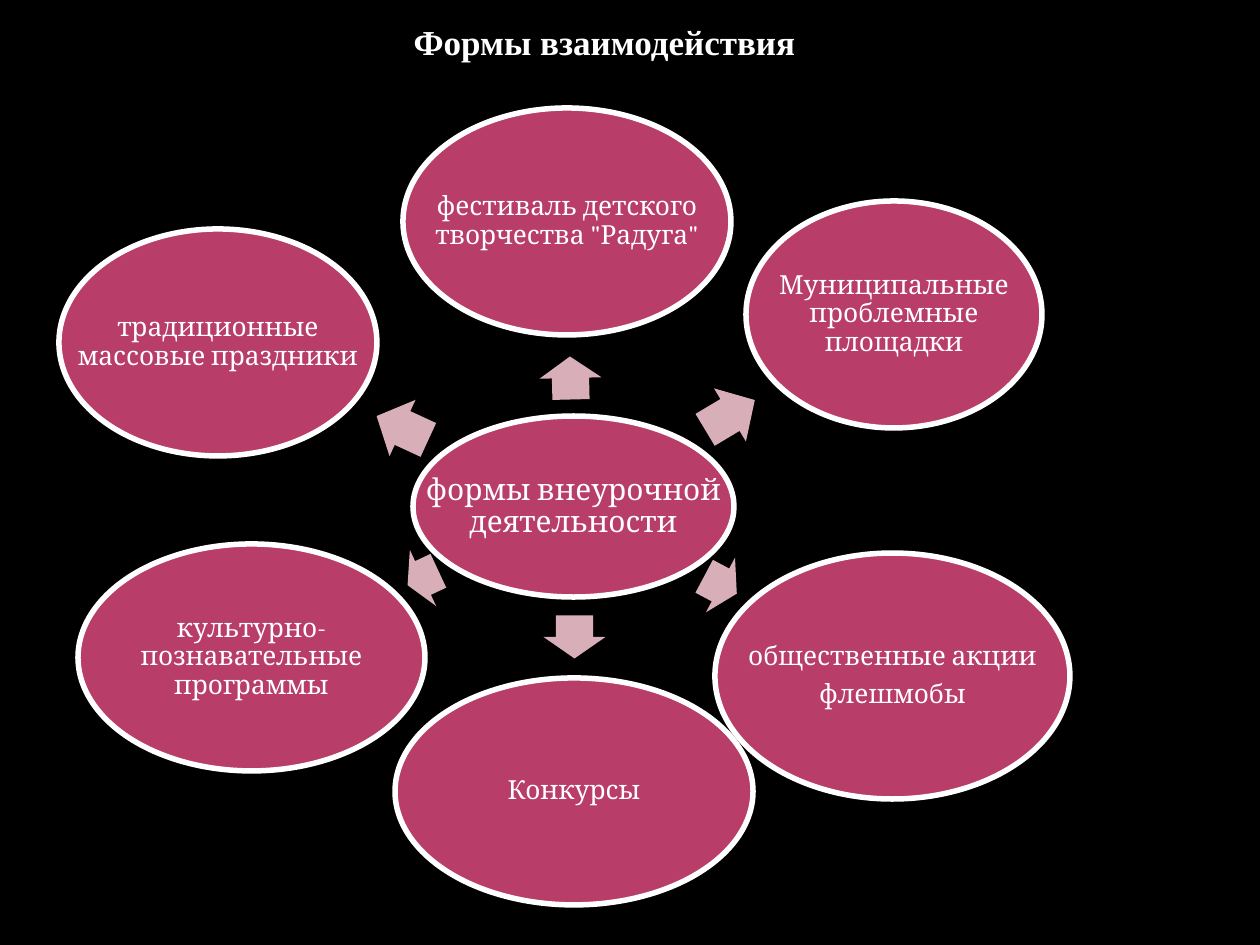
"""Builds a slide with a hub of extracurricular activity forms and six surrounding ellipses."""
from pptx import Presentation
from pptx.dml.color import RGBColor
from pptx.enum.shapes import MSO_SHAPE
from pptx.enum.text import MSO_ANCHOR, PP_ALIGN
from pptx.util import Emu, Pt

ELLIPSE = MSO_SHAPE.OVAL
ARROW = MSO_SHAPE.RIGHT_ARROW
MIDDLE = MSO_ANCHOR.MIDDLE
CENTER = PP_ALIGN.CENTER

PX = 914400 // 126
COLORS = {"background": "000000", "ellipse": "B83D68", "arrow": "D8AFB9", "light": "FFFFFF"}
BODY_FONT = "Cambria"
TITLE_FONT = "Times New Roman"
ARROW_HEIGHT = 62

TITLE = ("Формы взаимодействия", (374, 14, 461, 55))
HUB = (["формы внеурочной деятельности"], (413, 416, 321, 181))
FORMS = [
    (['фестиваль детского творчества "Радуга"'], (403, 108, 328, 227), (549, 347, 43), 268.6),
    (["Муниципальные проблемные площадки"], (746, 201, 296, 227), (701, 384, 58), 329),
    (["общественные акции", "флешмобы"], (715, 553, 355, 246), (702, 554, 37), 28),
    (["Конкурсы"], (395, 678, 358, 227), (553, 606, 43), 90),
    (["культурно-познавательные программы"], (78, 544, 347, 227), (406, 547, 34), 154.9),
    (["традиционные массовые праздники"], (59, 229, 318, 227), (374, 397, 57), 204.8),
]


def color(name):
    return RGBColor.from_string(COLORS[name])


def scaled(box):
    return [Emu(value * PX) for value in box]


def format_paragraph(paragraph, font_name, size):
    paragraph.alignment = CENTER
    paragraph.font.name = font_name
    paragraph.font.size = Pt(size)
    paragraph.font.color.rgb = color("light")


def add_filled(slide, kind, box, fill):
    shape = slide.shapes.add_shape(kind, *scaled(box))
    shape.shadow.inherit = False
    shape.fill.solid()
    shape.fill.fore_color.rgb = color(fill)
    return shape


def add_ellipse(slide, lines, box, size):
    ellipse = add_filled(slide, ELLIPSE, box, "ellipse")
    ellipse.line.color.rgb = color("light")
    ellipse.line.width = Pt(3.15)

    frame = slide.shapes.add_textbox(*scaled(box)).text_frame
    frame.word_wrap = True
    frame.vertical_anchor = MIDDLE
    frame.margin_left = frame.margin_right = Emu(2 * PX)
    frame.margin_top = frame.margin_bottom = Emu(2 * PX)
    frame.text = "\n".join(lines)
    for paragraph in frame.paragraphs:
        format_paragraph(paragraph, BODY_FONT, size)
        paragraph.line_spacing = 0.9
        paragraph.space_after = Pt(size * 0.35)


def add_arrow(slide, place, angle):
    arrow = add_filled(slide, ARROW, (*place, ARROW_HEIGHT), "arrow")
    arrow.line.fill.background()
    arrow.adjustments[0] = 0.6
    arrow.adjustments[1] = 0.5
    arrow.rotation = angle


def add_title(slide, text, box):
    title = slide.shapes.title
    title.left, title.top, title.width, title.height = scaled(box)
    frame = title.text_frame
    frame.text = text
    frame.word_wrap = True
    frame.vertical_anchor = MIDDLE
    paragraph = frame.paragraphs[0]
    format_paragraph(paragraph, TITLE_FONT, 20)
    paragraph.font.bold = True


def main():
    presentation = Presentation()
    presentation.slide_width, presentation.slide_height = scaled((1260, 945))
    slide = presentation.slides.add_slide(presentation.slide_layouts[5])
    slide.background.fill.solid()
    slide.background.fill.fore_color.rgb = color("background")

    add_title(slide, *TITLE)
    add_ellipse(slide, *HUB, 17)
    for lines, box, arrow_place, angle in FORMS:
        add_arrow(slide, arrow_place, angle)
        add_ellipse(slide, lines, box, 15)
    presentation.save("out.pptx")


if __name__ == "__main__":
    main()
